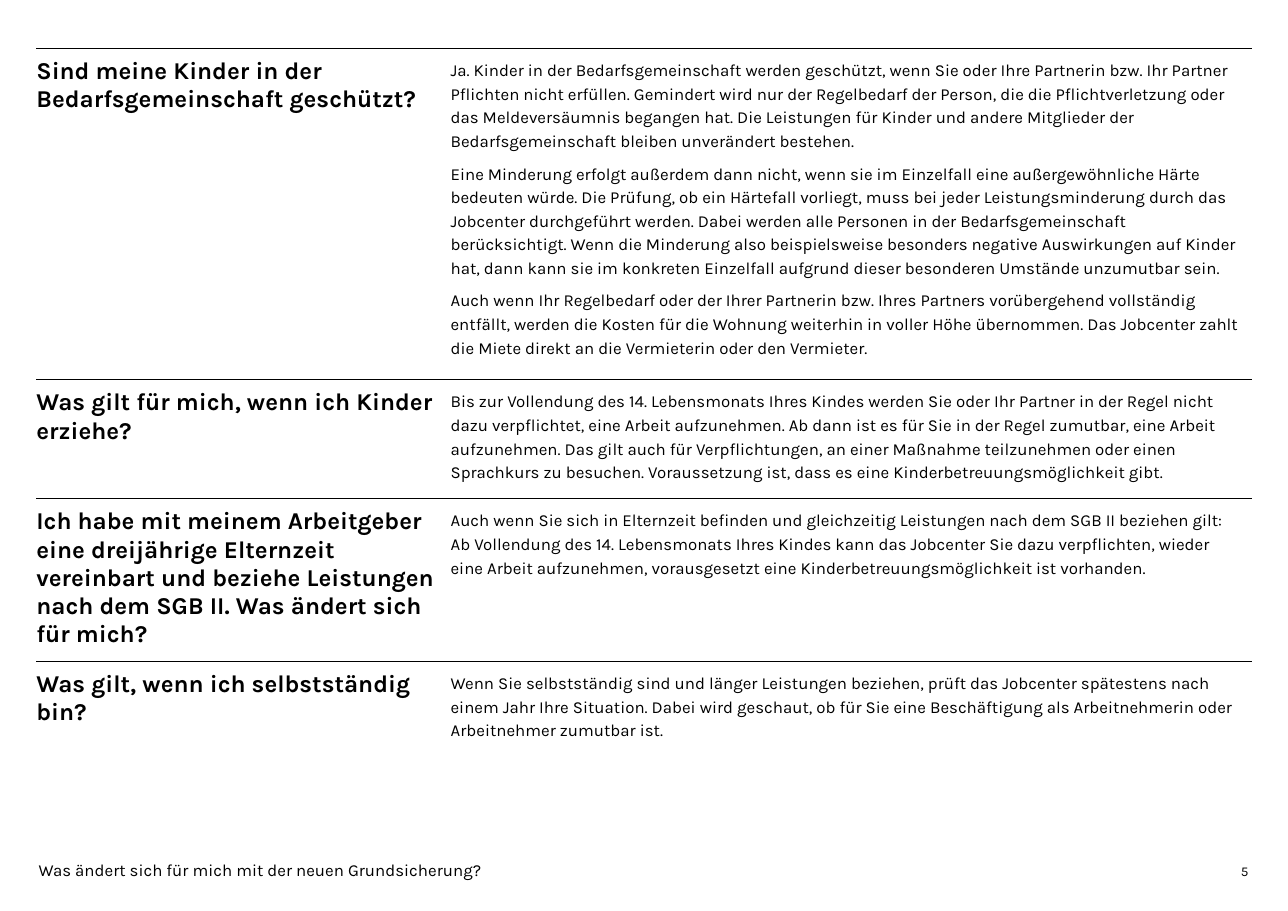
"""Build a German question-and-answer page on basic income support."""
from lxml import etree
from pptx import Presentation
from pptx.dml.color import RGBColor
from pptx.enum import text
from pptx.oxml import ns
from pptx.util import Inches, Pt

BLACK = RGBColor(0, 0, 0)
FONT = "Karla"
COLS = [3.76, 7.27]
ROWS = [2.92, 1.05, 1.44, 0.7]
FOOT = [
    ("Was ändert sich für mich mit der neuen Grundsicherung?",
     (0.35, 7.76, 7.56, 0.23), 11, text.PP_ALIGN.LEFT),
    ("5", (9.78, 7.75, 1.55, 0.23), 8.8, text.PP_ALIGN.RIGHT),
]
ITEMS = [
    ("Sind meine Kinder in der Bedarfsgemeinschaft geschützt?", [
        "Ja. Kinder in der Bedarfsgemeinschaft werden geschützt, wenn Sie oder Ihre "
        "Partnerin bzw. Ihr Partner Pflichten nicht erfüllen. Gemindert wird nur der "
        "Regelbedarf der Person, die die Pflichtverletzung oder das Meldeversäumnis "
        "begangen hat. Die Leistungen für Kinder und andere Mitglieder der "
        "Bedarfsgemeinschaft bleiben unverändert bestehen.",
        "Eine Minderung erfolgt außerdem dann nicht, wenn sie im Einzelfall eine "
        "außergewöhnliche Härte bedeuten würde. Die Prüfung, ob ein Härtefall vorliegt, "
        "muss bei jeder Leistungsminderung durch das Jobcenter durchgeführt werden. "
        "Dabei werden alle Personen in der Bedarfsgemeinschaft berücksichtigt. Wenn die "
        "Minderung also beispielsweise besonders negative Auswirkungen auf Kinder hat, "
        "dann kann sie im konkreten Einzelfall aufgrund dieser besonderen Umstände "
        "unzumutbar sein.",
        "Auch wenn Ihr Regelbedarf oder der Ihrer Partnerin bzw. Ihres Partners "
        "vorübergehend vollständig entfällt, werden die Kosten für die Wohnung weiterhin "
        "in voller Höhe übernommen. Das Jobcenter zahlt die Miete direkt an die "
        "Vermieterin oder den Vermieter.",
    ]),
    ("Was gilt für mich, wenn ich Kinder erziehe?", [
        "Bis zur Vollendung des 14. Lebensmonats Ihres Kindes werden Sie oder Ihr Partner "
        "in der Regel nicht dazu verpflichtet, eine Arbeit aufzunehmen. Ab dann ist es für "
        "Sie in der Regel zumutbar, eine Arbeit aufzunehmen. Das gilt auch für "
        "Verpflichtungen, an einer Maßnahme teilzunehmen oder einen Sprachkurs zu "
        "besuchen. Voraussetzung ist, dass es eine Kinderbetreuungsmöglichkeit gibt.",
    ]),
    ("Ich habe mit meinem Arbeitgeber eine dreijährige Elternzeit vereinbart und "
     "beziehe Leistungen nach dem SGB II. Was ändert sich für mich?", [
        "Auch wenn Sie sich in Elternzeit befinden und gleichzeitig Leistungen nach dem "
        "SGB II beziehen gilt: Ab Vollendung des 14. Lebensmonats Ihres Kindes kann das "
        "Jobcenter Sie dazu verpflichten, wieder eine Arbeit aufzunehmen, vorausgesetzt "
        "eine Kinderbetreuungsmöglichkeit ist vorhanden.",
     ]),
    ("Was gilt, wenn ich selbstständig bin?", [
        "Wenn Sie selbstständig sind und länger Leistungen beziehen, prüft das Jobcenter "
        "spätestens nach einem Jahr Ihre Situation. Dabei wird geschaut, ob für Sie eine "
        "Beschäftigung als Arbeitnehmerin oder Arbeitnehmer zumutbar ist.",
    ]),
]


def style(para, size, bold=False):
    for run in para.runs:
        run.font.name = FONT
        run.font.size = Pt(size)
        run.font.bold = bold
        run.font.color.rgb = BLACK


def border(cell, sides):
    props = cell._tc.get_or_add_tcPr()
    for spot, side in enumerate("LRTB"):
        line = etree.Element(ns.qn(f"a:ln{side}"), w=str(Pt(1)))
        if side in sides:
            fill = etree.SubElement(line, ns.qn("a:solidFill"))
            etree.SubElement(fill, ns.qn("a:srgbClr"), val=str(BLACK))
        else:
            etree.SubElement(line, ns.qn("a:noFill"))
        props.insert(spot, line)


def fill_cell(cell, paras, size, bold, base, sides):
    cell.margin_left, cell.margin_top = 0, Inches(0.08)
    cell.margin_right, cell.margin_bottom = Inches(0.1), Inches(base)
    cell.fill.background()
    border(cell, sides)
    cell.text_frame.text = "\n".join(paras)
    for para in cell.text_frame.paragraphs:
        style(para, size, bold)
        if not bold:
            para.line_spacing = 1.2
            para.space_after = Pt(6)


def add_foot(slide, words, box, size, align):
    frame = slide.shapes.add_textbox(*map(Inches, box)).text_frame
    frame.word_wrap = True
    frame.vertical_anchor = text.MSO_ANCHOR.BOTTOM
    frame.margin_left = frame.margin_right = 0
    frame.margin_top = frame.margin_bottom = 0
    frame.text = words
    frame.paragraphs[0].alignment = align
    style(frame.paragraphs[0], size)


def main():
    deck = Presentation()
    deck.slide_width, deck.slide_height = Inches(11.69), Inches(8.27)
    slide = deck.slides.add_slide(deck.slide_layouts[6])
    for foot in FOOT:
        add_foot(slide, *foot)
    table = slide.shapes.add_table(
        len(ITEMS), len(COLS), Inches(0.33), Inches(0.44),
        Inches(sum(COLS)), Inches(sum(ROWS))).table
    table.first_row = table.horz_banding = False
    for col, width in zip(table.columns, COLS):
        col.width = Inches(width)
    for num, (ask, reply) in enumerate(ITEMS):
        table.rows[num].height = Inches(ROWS[num])
        sides = "T" if num == len(ITEMS) - 1 else "TB"
        fill_cell(table.cell(num, 0), [ask], 15.8, True, 0.08, sides)
        fill_cell(table.cell(num, 1), reply, 11, False, 0.12, sides)
    deck.save("out.pptx")


if __name__ == "__main__":
    main()
